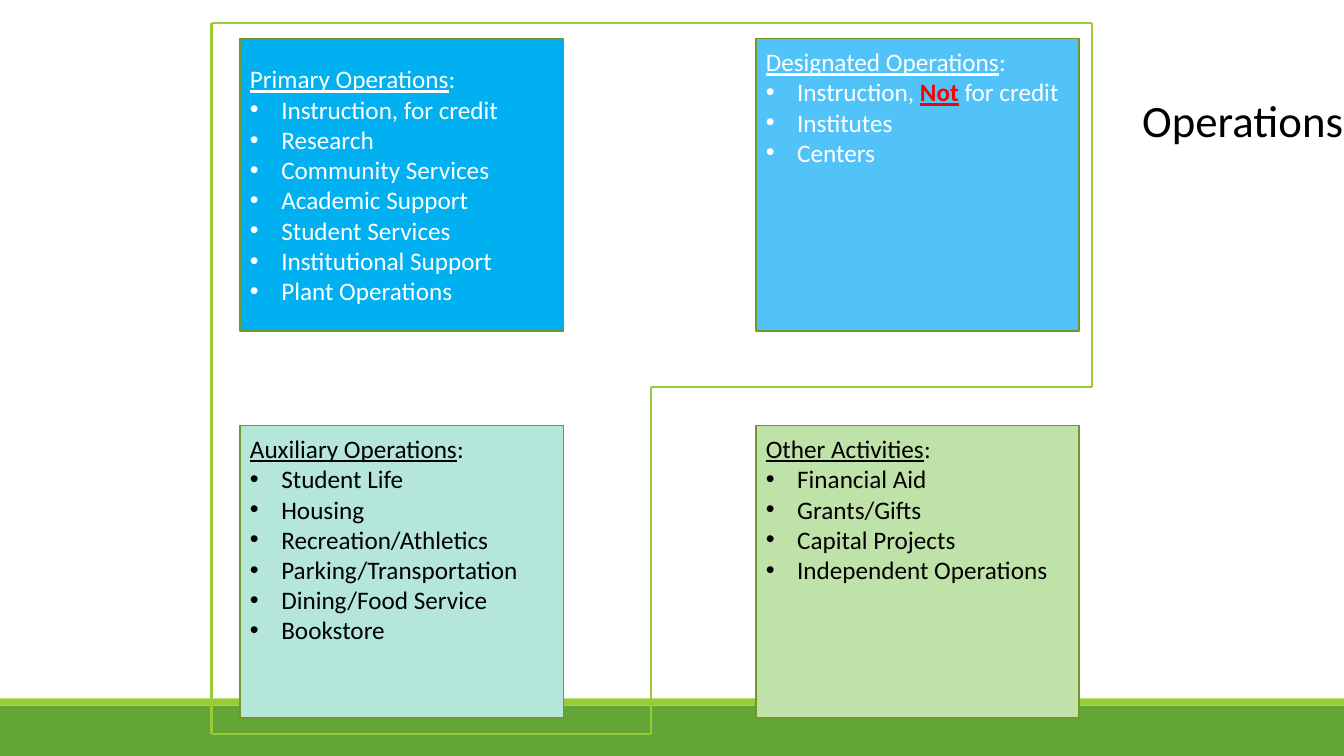
from dataclasses import dataclass
from itertools import pairwise, product

from lxml.etree import SubElement
from pptx import Presentation
from pptx.dml.color import RGBColor
from pptx.enum.shapes import MSO_CONNECTOR, MSO_SHAPE
from pptx.enum.text import MSO_ANCHOR, PP_ALIGN
from pptx.oxml.ns import qn
from pptx.util import Cm, Pt


@dataclass(frozen=True)
class Theme:
    font: str = "Calibri"
    title_size: int = 32
    body_size: int = 18
    white: str = "FFFFFF"
    black: str = "000000"
    emphasis: str = "FF0000"
    ground: str = "63A537"
    accent: str = "99CB38"
    border: str = "719629"
    primary: str = "00B0F0"
    designated: str = "51C3F9"
    auxiliary: str = "B4E6DA"
    other: str = "BFE2A8"


theme = Theme()
rgb = RGBColor.from_string


def add_rectangle(left, top, width, height, fill):
    rectangle = slide.shapes.add_shape(
        MSO_SHAPE.RECTANGLE, Cm(left), Cm(top), Cm(width), Cm(height))
    rectangle.shadow.inherit = False
    rectangle.fill.solid()
    rectangle.fill.fore_color.rgb = rgb(fill)
    rectangle.line.fill.background()
    return rectangle


def style_paragraph(paragraph, size, color, align=PP_ALIGN.LEFT):
    paragraph.alignment = align
    paragraph.font.name = theme.font
    paragraph.font.size = Pt(size)
    paragraph.font.color.rgb = rgb(color)


prs = Presentation()
prs.slide_width, prs.slide_height = Cm(33.87), Cm(19.05)
slide = prs.slides.add_slide(prs.slide_layouts[6])

# Footer bands
add_rectangle(0, 17.78, 33.87, 1.27, theme.ground)
add_rectangle(0, 17.6, 33.87, 0.18, theme.accent)

# Four groups of activities, row by row
groups = [
    ("Primary Operations", theme.primary, theme.white, MSO_ANCHOR.MIDDLE,
     ["Instruction, for credit", "Research", "Community Services", "Academic Support",
      "Student Services", "Institutional Support", "Plant Operations"]),
    ("Designated Operations", theme.designated, theme.white, MSO_ANCHOR.TOP,
     ["Instruction, Not for credit", "Institutes", "Centers"]),
    ("Auxiliary Operations", theme.auxiliary, theme.black, MSO_ANCHOR.TOP,
     ["Student Life", "Housing", "Recreation/Athletics", "Parking/Transportation",
      "Dining/Food Service", "Bookstore"]),
    ("Other Activities", theme.other, theme.black, MSO_ANCHOR.TOP,
     ["Financial Aid", "Grants/Gifts", "Capital Projects", "Independent Operations"]),
]
corners = product((0.97, 10.72), (6.05, 19.05))
for (top, left), (heading, fill, color, anchor, activities) in zip(corners, groups):
    box = add_rectangle(left, top, 8.15, 7.37, fill)
    box.line.color.rgb = rgb(theme.border)
    box.line.width = Pt(1.25)
    frame = box.text_frame
    frame.word_wrap = True
    frame.vertical_anchor = anchor
    if anchor == MSO_ANCHOR.TOP:
        frame.margin_top = Cm(0.2)

    heading_line = frame.paragraphs[0]
    style_paragraph(heading_line, theme.body_size, color)
    heading_run = heading_line.add_run()
    heading_run.text = heading
    heading_run.font.underline = True
    heading_line.add_run().text = ":"

    for activity in activities:
        item = frame.add_paragraph()
        style_paragraph(item, theme.body_size, color)
        properties = item._p.get_or_add_pPr()
        properties.set("marL", str(Cm(0.79)))
        properties.set("indent", str(-Cm(0.79)))
        bullet_font = SubElement(properties, qn("a:buFont"), typeface="Arial")
        bullet_font.addnext(SubElement(properties, qn("a:buChar"), char="•"))
        # Bullet settings come before the default run properties
        properties.append(properties.find(qn("a:defRPr")))

        before, negation, after = activity.partition("Not")
        item.add_run().text = before
        if negation:
            negation_run = item.add_run()
            negation_run.text = negation
            negation_run.font.bold = True
            negation_run.font.underline = True
            negation_run.font.color.rgb = rgb(theme.emphasis)
            item.add_run().text = after

# Title
title = slide.shapes.add_textbox(Cm(28.5), Cm(2.21), Cm(5.64), Cm(1.63))
title.text_frame.word_wrap = False
title_line = title.text_frame.paragraphs[0]
title_line.text = "Operations"
style_paragraph(title_line, theme.title_size, theme.black, PP_ALIGN.CENTER)

# Outline around the three groups of operations
outline = [(5.33, 0.58), (5.33, 18.49), (16.41, 18.49), (16.41, 9.75),
           (27.51, 9.75), (27.51, 0.58), (5.33, 0.58)]
for (x1, y1), (x2, y2) in pairwise(outline):
    side = slide.shapes.add_connector(
        MSO_CONNECTOR.STRAIGHT, Cm(x1), Cm(y1), Cm(x2), Cm(y2))
    side.line.color.rgb = rgb(theme.accent)
    side.line.width = Pt(1.5)
    SubElement(side._element.spPr, qn("a:effectLst"))

prs.save("out.pptx")
